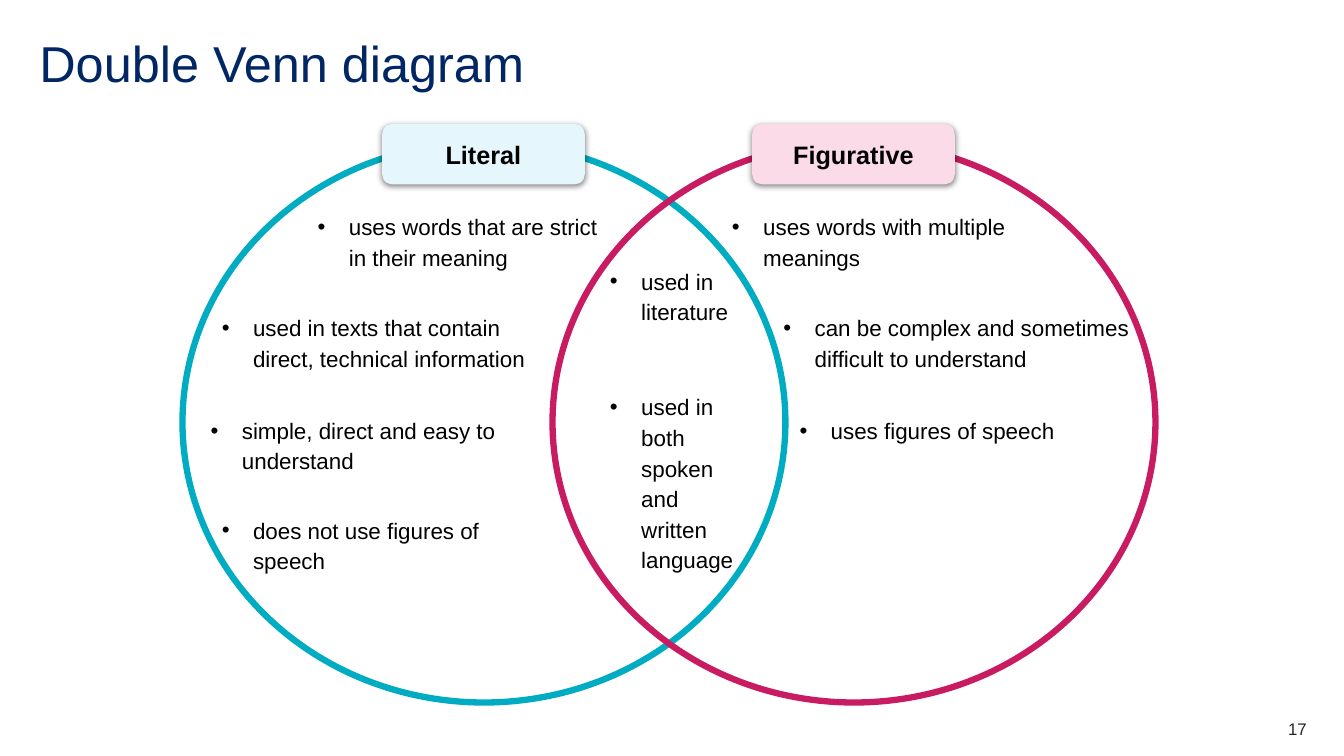
from dataclasses import dataclass

from lxml import etree
from pptx import Presentation
from pptx.dml.color import RGBColor
from pptx.enum.shapes import MSO_SHAPE
from pptx.enum.text import MSO_ANCHOR, PP_ALIGN
from pptx.oxml import parse_xml
from pptx.oxml.ns import nsdecls, qn
from pptx.shapes.autoshape import Shape
from pptx.slide import Slide
from pptx.util import Pt

OVAL = MSO_SHAPE.OVAL
ROUND = MSO_SHAPE.ROUNDED_RECTANGLE
MIDDLE = MSO_ANCHOR.MIDDLE
LEFT, CENTER, RIGHT = PP_ALIGN.LEFT, PP_ALIGN.CENTER, PP_ALIGN.RIGHT

SCALE = 9144
FONT = "Arial"
HEX = {
    "navy": "002664",
    "black": "000000",
    "gray": "22272B",
    "teal": "00ACC2",
    "sky": "E5F7FC",
    "rose": "C81B62",
    "pink": "FBDBE7",
}
TOP, WIDE, HIGH = 141, 598, 556
TAB_TOP, TAB_WIDE, TAB_HIGH = 123, 201, 60
ROWS = (195, 295, 397, 496)
PAD, INDENT = 13, 31


@dataclass(frozen=True)
class Note:
    left: int
    top: int
    width: int
    height: int
    lines: tuple[str, ...]
    gap: int = 12


@dataclass(frozen=True)
class Ring:
    left: int
    title: str
    line: str
    fill: str
    notes: tuple[Note, ...]


RINGS = (
    Ring(181, "Literal", "teal", "sky", (
        Note(302, ROWS[0], 311, 53, ("uses words that are strict in their meaning",)),
        Note(207, ROWS[1], 330, 53,
             ("used in texts that contain direct, technical information",)),
        Note(196, ROWS[2], 330, 53, ("simple, direct and easy to understand",)),
        Note(207, ROWS[3], 330, 53, ("does not use figures of speech",)),
    )),
    Ring(548, "Figurative", "rose", "pink", (
        Note(713, ROWS[0], 344, 48, ("uses words with multiple meanings",)),
        Note(764, ROWS[1], 384, 53,
             ("can be complex and sometimes difficult to understand",)),
        Note(780, ROWS[2], 330, 40, ("uses figures of speech",)),
    )),
)
SHARED = Note(592, 249, 149, 328, (
    "used in literature",
    "used in both spoken and written language",
), 46)


def px(num: int) -> int:
    return num * SCALE


def color(name: str) -> RGBColor:
    return RGBColor.from_string(HEX[name])


def write(para, text: str, size: int, tint: str, bold: bool = False) -> None:
    run = para.add_run()
    run.text = text
    run.font.name = FONT
    run.font.size = Pt(size)
    run.font.bold = bold
    run.font.color.rgb = color(tint)


def add_box(slide: Slide, left: int, top: int, width: int, height: int, pad: int = 0):
    box = slide.shapes.add_textbox(px(left), px(top), px(width), px(height))
    frame = box.text_frame
    frame.word_wrap = True
    frame.margin_left = frame.margin_right = px(pad)
    frame.margin_top = frame.margin_bottom = px(pad)
    return frame


def add_text(slide: Slide, left: int, top: int, width: int, height: int,
             text: str, size: int, tint: str, align: PP_ALIGN = LEFT) -> None:
    para = add_box(slide, left, top, width, height).paragraphs[0]
    para.alignment = align
    para.line_spacing = 0.9 if align == LEFT else 1.0
    write(para, text, size, tint)


def add_note(slide: Slide, note: Note) -> None:
    frame = add_box(slide, note.left, note.top, note.width, note.height, PAD)
    for num, line in enumerate(note.lines):
        para = frame.add_paragraph() if num else frame.paragraphs[0]
        props = para._p.get_or_add_pPr()
        props.set("marL", str(px(INDENT)))
        props.set("indent", str(-px(INDENT)))
        tint = etree.SubElement(props, qn("a:buClr"))
        etree.SubElement(tint, qn("a:srgbClr")).set("val", HEX["black"])
        etree.SubElement(props, qn("a:buFont")).set("typeface", FONT)
        etree.SubElement(props, qn("a:buChar")).set("char", "•")
        para.line_spacing = 1.14
        para.space_after = Pt(note.gap)
        write(para, line, 16, "black")


def add_shadow(shape: Shape) -> None:
    shape._element.spPr.append(parse_xml(
        f'<a:effectLst {nsdecls("a")}>'
        f'<a:outerShdw blurRad="{Pt(4.5)}" dist="{Pt(1.5)}" dir="5400000" '
        'algn="t" rotWithShape="0">'
        f'<a:srgbClr val="{HEX["black"]}"><a:alpha val="50000"/></a:srgbClr>'
        '</a:outerShdw></a:effectLst>'
    ))


def add_ring(slide: Slide, ring: Ring) -> None:
    group = slide.shapes.add_group_shape()
    oval = group.shapes.add_shape(OVAL, px(ring.left), px(TOP), px(WIDE), px(HIGH))
    oval.shadow.inherit = False
    oval.fill.background()
    oval.line.color.rgb = color(ring.line)
    oval.line.width = Pt(4.5)

    left = ring.left + (WIDE - TAB_WIDE) // 2
    tab = group.shapes.add_shape(ROUND, px(left), px(TAB_TOP), px(TAB_WIDE), px(TAB_HIGH))
    tab.fill.solid()
    tab.fill.fore_color.rgb = color(ring.fill)
    tab.line.fill.background()
    add_shadow(tab)
    frame = tab.text_frame
    frame.word_wrap = True
    frame.vertical_anchor = MIDDLE
    frame.paragraphs[0].alignment = CENTER
    write(frame.paragraphs[0], ring.title, 18, "black", True)

    for note in ring.notes:
        add_note(slide, note)


def main() -> None:
    deck = Presentation()
    deck.slide_width, deck.slide_height = px(1333), px(750)
    slide = deck.slides.add_slide(deck.slide_layouts[6])
    add_text(slide, 39, 39, 1102, 60, "Double Venn diagram", 36, "navy")
    for ring in RINGS:
        add_ring(slide, ring)
    add_note(slide, SHARED)
    add_text(slide, 1217, 713, 79, 20, "17", 12, "gray", RIGHT)
    deck.save("out.pptx")


if __name__ == "__main__":
    main()
